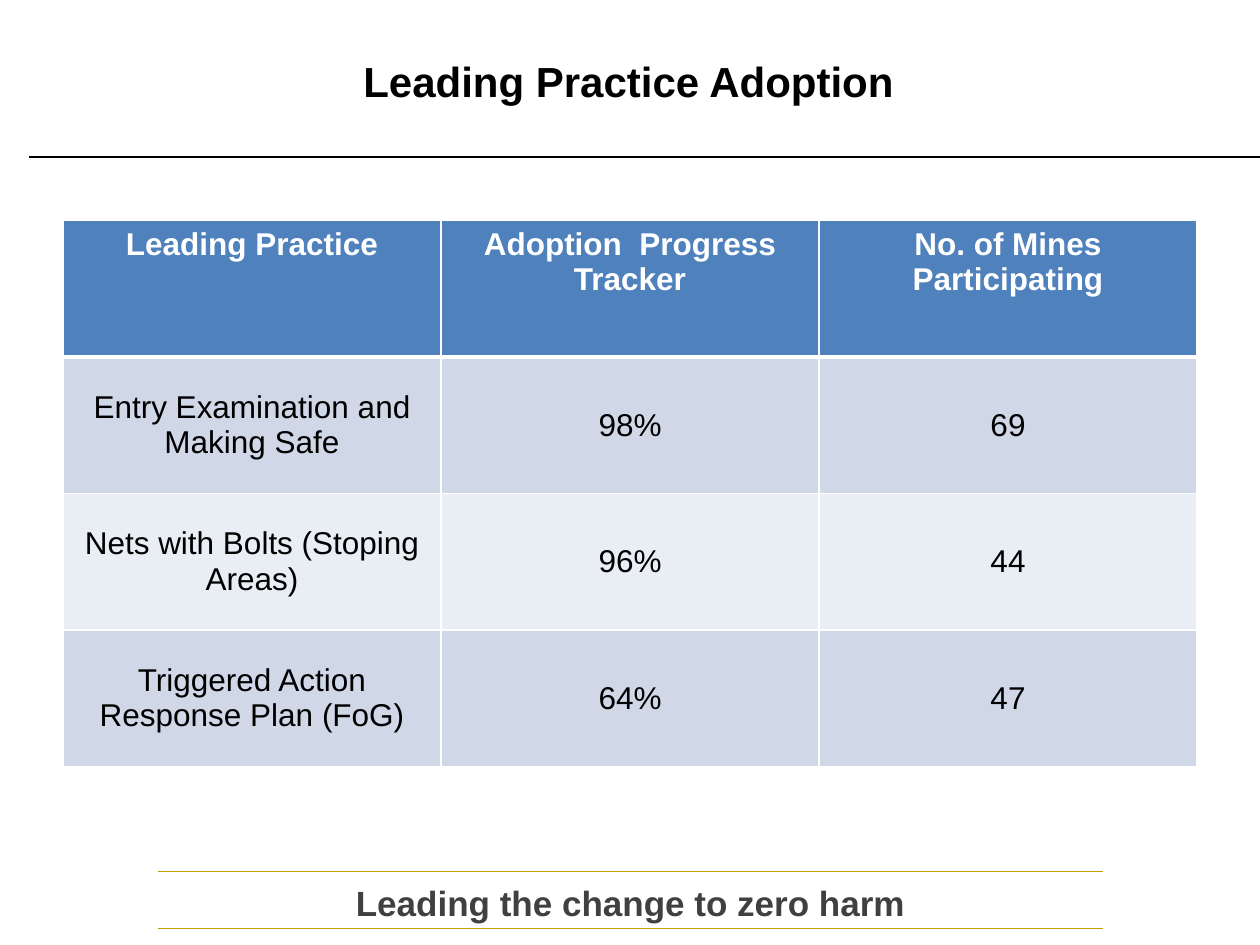
from lxml.etree import SubElement
from pptx import Presentation
from pptx.dml.color import RGBColor
from pptx.enum.shapes import MSO_CONNECTOR
from pptx.enum.text import MSO_ANCHOR, PP_ALIGN
from pptx.oxml.ns import qn
from pptx.util import Pt

BLACK = RGBColor(0x00, 0x00, 0x00)
WHITE = RGBColor(0xFF, 0xFF, 0xFF)
GOLD = RGBColor(0xC4, 0x9F, 0x00)
DARK_GREY = RGBColor(0x40, 0x40, 0x40)
HEADER_BLUE = RGBColor(0x4F, 0x81, 0xBD)
BAND_DARK = RGBColor(0xD0, 0xD8, 0xE8)
BAND_LIGHT = RGBColor(0xE9, 0xED, 0xF4)

ADOPTION = [
    ("Leading Practice", "Adoption  Progress Tracker", "No. of Mines Participating"),
    ("Entry Examination and Making Safe", "98%", "69"),
    ("Nets with Bolts (Stoping Areas)", "96%", "44"),
    ("Triggered Action Response Plan (FoG)", "64%", "47"),
]


def write_centred(text_frame, text, size, color, bold):
    text_frame.text = text
    paragraph = text_frame.paragraphs[0]
    paragraph.alignment = PP_ALIGN.CENTER
    font = paragraph.font
    font.name = "Arial"
    font.size = Pt(size)
    font.bold = bold
    font.color.rgb = color


def add_rule(slide, left, right, y, color, width):
    """Draw a horizontal line without a shadow."""
    rule = slide.shapes.add_connector(
        MSO_CONNECTOR.STRAIGHT, Pt(left), Pt(y), Pt(right), Pt(y))
    rule.line.color.rgb = color
    rule.line.width = Pt(width)
    SubElement(rule._element.spPr, qn("a:effectLst"))


def add_heading(slide, box, text, size, color, anchor):
    heading = slide.shapes.add_textbox(*map(Pt, box))
    heading.text_frame.word_wrap = True
    heading.text_frame.vertical_anchor = anchor
    write_centred(heading.text_frame, text, size, color, True)


def set_borders(cell, top, bottom):
    """Give a cell white borders; side borders are 1 pt wide."""
    properties = cell._tc.get_or_add_tcPr()
    for side, width in (("L", 1), ("R", 1), ("T", top), ("B", bottom)):
        border = SubElement(properties, qn(f"a:ln{side}"), w=str(Pt(width)))
        fill = SubElement(border, qn("a:solidFill"))
        SubElement(fill, qn("a:srgbClr"), val=str(WHITE))


def add_adoption_table(slide):
    table = slide.shapes.add_table(
        len(ADOPTION), len(ADOPTION[0]), Pt(36), Pt(126), Pt(648), Pt(312)).table
    for row, entries in enumerate(ADOPTION):
        is_header = row == 0
        band = BAND_DARK if row % 2 else BAND_LIGHT
        for column, entry in enumerate(entries):
            cell = table.cell(row, column)
            set_borders(cell, 3 if row == 1 else 1, 3 if is_header else 1)
            cell.fill.solid()
            cell.fill.fore_color.rgb = HEADER_BLUE if is_header else band
            cell.vertical_anchor = MSO_ANCHOR.TOP if is_header else MSO_ANCHOR.MIDDLE
            write_centred(cell.text_frame, entry, 18,
                          WHITE if is_header else BLACK, is_header)


def main():
    presentation = Presentation()
    presentation.slide_width = Pt(720)
    presentation.slide_height = Pt(540)
    slide = presentation.slides.add_slide(presentation.slide_layouts[6])

    for y in (498, 530.6):
        add_rule(slide, 90, 630, y, GOLD, 1)
    add_rule(slide, 16.8, 720, 89.8, BLACK, 0.75)
    add_heading(slide, (5, 24, 708.5, 44.6), "Leading Practice Adoption",
                24, BLACK, MSO_ANCHOR.MIDDLE)
    add_heading(slide, (101.5, 500.4, 517.7, 28), "Leading the change to zero harm",
                20, DARK_GREY, MSO_ANCHOR.TOP)
    add_adoption_table(slide)

    presentation.save("out.pptx")


if __name__ == "__main__":
    main()
